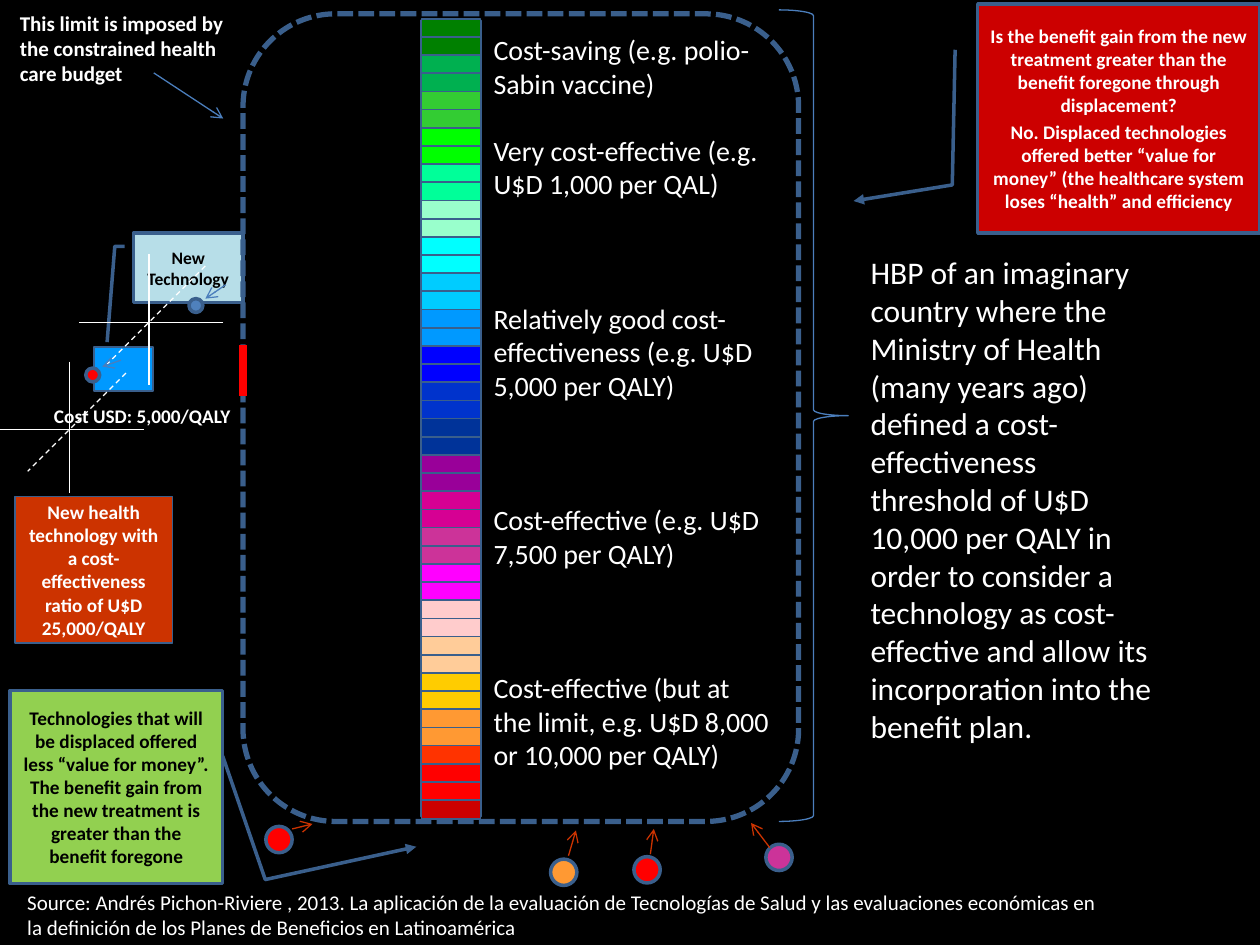
from lxml import etree
from pptx import Presentation
from pptx.dml.color import RGBColor
from pptx.enum.dml import MSO_LINE
from pptx.enum.shapes import MSO_CONNECTOR, MSO_SHAPE
from pptx.enum.text import MSO_ANCHOR, PP_ALIGN
from pptx.oxml.ns import qn
from pptx.util import Cm, Pt

STRAIGHT = MSO_CONNECTOR.STRAIGHT
RECTANGLE, ROUNDED = MSO_SHAPE.RECTANGLE, MSO_SHAPE.ROUNDED_RECTANGLE
CALLOUT, BRACE, OVAL = MSO_SHAPE.LINE_CALLOUT_2, MSO_SHAPE.RIGHT_BRACE, MSO_SHAPE.OVAL
LEFT, CENTER, RIGHT = PP_ALIGN.LEFT, PP_ALIGN.CENTER, PP_ALIGN.RIGHT
TOP, MIDDLE = MSO_ANCHOR.TOP, MSO_ANCHOR.MIDDLE
DASH, SHORT_DASH = MSO_LINE.DASH, MSO_LINE.SQUARE_DOT

THEME = {
    "font": "Calibri",
    "background": "000000", "light": "FFFFFF", "dark": "000000",
    "outline": "3A5F8C", "thin": "4B7EBC", "accent": "4F81BD",
    "sky": "0099FF", "pale": "B7DEE8", "green": "92D050", "rust": "CC3300",
    "crimson": "CC0000", "red": "FF0000", "orange": "FF9933", "magenta": "CC3399",
    "plan": 18, "label": 16, "note": 12, "box": 11, "small": 10,
}

PAIRED_BANDS = (
    "008000 00B050 33CC33 00FF00 00FF99 99FFCC 00FFFF 00CCFF 0099FF 0000FF "
    "0033CC 003399 990099 D60093 CC3399 FF00FF FFCCCC FFCC99 FFCC00 FF9933"
).split()
FINAL_BANDS = ["FF3300", "FF0000", "FF0000", "CC0000"]
STRIP = {"left": 8.5, "first": 0.38, "last": 16.13, "width": 1.19, "height": 0.38}

LABELS = [
    ("Cost-saving (e.g. polio-Sabin vaccine)", 0),
    ("Very cost-effective (e.g. U$D 1,000 per QAL)", 1),
    ("Relatively good cost-effectiveness (e.g. U$D 5,000 per QALY)", 3),
    ("Cost-effective (e.g. U$D 7,500 per QALY)", 3),
    ("Cost-effective (but at the limit, e.g. U$D 8,000 or 10,000 per QALY)", 3),
]
LABEL_LINE = 19.2

TEXTS = [
    ((17.3, 4.98, 6.2, 10.26), "plan", False, LEFT, TOP,
     "HBP of an imaginary country where the Ministry of Health (many years ago) defined a "
     "cost-effectiveness threshold of U$D 10,000 per QALY in order to consider a technology "
     "as cost-effective and allow its incorporation into the benefit plan."),
    ((0.15, 0.08, 5, 1.8), "note", True, LEFT, TOP,
     "This limit is imposed by the constrained health care budget"),
    ((0.71, 8.03, 4.19, 0.74), "box", True, RIGHT, TOP, "Cost USD: 5,000/QALY"),
    ((0.3, 17.83, 22.25, 1.22), "note", False, LEFT, MIDDLE,
     "Source: Andrés Pichon-Riviere , 2013. La aplicación de la evaluación de Tecnologías de "
     "Salud y las evaluaciones económicas en la definición de los Planes de Beneficios en "
     "Latinoamérica"),
]

BOXES = [
    (RECTANGLE, (1.9, 6.99, 1.19, 0.89), "sky", 1, [], False, "light", "box", []),
    (CALLOUT, (2.69, 4.7, 2.21, 1.4), "pale", 2,
     [0.19, -0.08, 0.19, -0.17, 1.57, -0.24], False, "dark", "small", ["New Technology"]),
    (CALLOUT, (0.2, 13.92, 4.29, 3.89), "green", 2,
     [0.34, 1, 0.98, 1.2, 0.81, 1.91], True, "dark", "box",
     ["Technologies that will be displaced offered less “value for money”. The benefit gain "
      "from the new treatment is greater than the benefit foregone"]),
    (RECTANGLE, (0.3, 10.01, 3.18, 2.95), "rust", 1, [], False, "light", "box",
     ["New health technology with a cost-effectiveness ratio of U$D 25,000/QALY"]),
    (CALLOUT, (19.71, 0.08, 5.69, 4.62), "crimson", 2,
     [0.2, -0.08, 0.79, -0.09, 0.86, -0.44], True, "light", "box",
     ["Is the benefit gain from the new treatment greater than the benefit foregone through "
      "displacement?",
      "No. Displaced technologies offered better “value for money” (the healthcare system "
      "loses “health” and efficiency"]),
]

CROSS_CENTRES = [(3, 6.5), (1.4, 8.66)]
CROSS_LINES = [
    ((0, -1.37), (0, 1.27), 1, None),
    ((1.5, 0), (-1.4, 0), 1, None),
    ((1.14, -1.14), (-0.84, 0.84), 0.75, DASH),
]
DOTS = [
    ((3.81, 6.02), 0.28, "accent"), ((1.73, 7.42), 0.28, "red"),
    ((15.44, 17.02), 0.53, "magenta"), ((12.78, 17.27), 0.53, "red"),
    ((5.36, 16.66), 0.53, "red"), ((11.1, 17.32), 0.53, "orange"),
]
ARROWS = [
    ((3.1, 1.47), (4.5, 2.39), "thin"), ((4.55, 5.74), (4.14, 6.02), "thin"),
    ((2.44, 7.26), (2.06, 7.39), "thin"), ((15.52, 17.09), (15.14, 16.59), "rust"),
    ((13.11, 17.22), (13.18, 16.71), "rust"), ((11.46, 17.25), (11.61, 16.74), "rust"),
    ((5.89, 16.71), (6.3, 16.61), "rust"),
]


def color(name):
    """Return a theme colour, or the colour of a hexadecimal value."""
    return RGBColor.from_string(THEME.get(name, name))


def style_line(line, name, width, dash=None, arrow=None):
    """Set colour, width, dash and end arrow of a line."""
    line.color.rgb = color(name)
    line.width = Pt(width)
    if dash:
        line.dash_style = dash
    if arrow:
        properties = line.color._xFill.getparent()
        etree.SubElement(properties, qn("a:tailEnd"), type=arrow)


def add_shape(slide, kind, place, fill, width, line="outline", dash=None, arrow=None):
    """Add a flat preset shape."""
    shape = slide.shapes.add_shape(kind, *map(Cm, place))
    shape.shadow.inherit = False
    if fill:
        shape.fill.solid()
        shape.fill.fore_color.rgb = color(fill)
    else:
        shape.fill.background()
    style_line(shape.line, line, width, dash, arrow)
    return shape


def add_line(slide, start, end, name, width, dash=None, arrow=None):
    """Add a straight line without shadow."""
    connector = slide.shapes.add_connector(STRAIGHT, *map(Cm, (*start, *end)))
    style_line(connector.line, name, width, dash, arrow)
    etree.SubElement(connector._element.spPr, qn("a:effectLst"))


def write(frame, entries, size, ink="light", bold=False, align=LEFT, anchor=TOP):
    """Fill a text frame with (text, space before) paragraphs."""
    frame.word_wrap = True
    frame.vertical_anchor = anchor
    for index, (text, space) in enumerate(entries):
        paragraph = frame.add_paragraph() if index else frame.paragraphs[0]
        paragraph.alignment = align
        paragraph.space_before = Pt(space)
        run = paragraph.add_run()
        run.text = text
        run.font.name = THEME["font"]
        run.font.size = Pt(THEME[size])
        run.font.bold = bold
        run.font.color.rgb = color(ink)


def add_strip(slide):
    """Draw the scale of coloured bands on its backing."""
    left, first, width = STRIP["left"], STRIP["first"], STRIP["width"]
    add_shape(slide, RECTANGLE, (left, 0.41, width, 16.05), "accent", 2)
    bands = [band for band in PAIRED_BANDS for _ in range(2)] + FINAL_BANDS
    pitch = (STRIP["last"] - first) / (len(bands) - 1)
    for row, band in enumerate(bands):
        add_shape(slide, RECTANGLE, (left, first + row * pitch, width, STRIP["height"]), band, 1)


def main():
    """Build the slide and save it."""
    presentation = Presentation()
    presentation.slide_width, presentation.slide_height = Cm(25.4), Cm(19.05)
    slide = presentation.slides.add_slide(presentation.slide_layouts[6])
    slide.background.fill.solid()
    slide.background.fill.fore_color.rgb = color("background")

    add_strip(slide)
    add_shape(slide, BRACE, (15.7, 0.2, 1.4, 16.36), None, 0.75, "thin")
    for kind, place, fill, width, adjustments, pointed, ink, size, texts in BOXES:
        arrow = "triangle" if pointed else None
        shape = add_shape(slide, kind, place, fill, width, arrow=arrow)
        for index, value in enumerate(adjustments):
            shape.adjustments[index] = value
        entries = [(text, 2 if index else 0) for index, text in enumerate(texts)]
        write(shape.text_frame, entries, size, ink, True, CENTER, MIDDLE)
    add_shape(slide, ROUNDED, (4.9, 0.28, 11.2, 16.28), None, 3, dash=SHORT_DASH)
    add_line(slide, (4.9, 6.96), (4.9, 7.98), "red", 4.5)

    for place, size, bold, align, anchor, text in TEXTS:
        frame = slide.shapes.add_textbox(*map(Cm, place)).text_frame
        write(frame, [(text, 0)], size, "light", bold, align, anchor)
    label_frame = slide.shapes.add_textbox(Cm(9.7), Cm(0.53), Cm(6.15), Cm(15.29)).text_frame
    write(label_frame, [(text, gap * LABEL_LINE) for text, gap in LABELS], "label")

    for x, y in CROSS_CENTRES:
        for (x1, y1), (x2, y2), width, dash in CROSS_LINES:
            add_line(slide, (x + x1, y + y1), (x + x2, y + y2), "light", width, dash)
    for corner, diameter, fill in DOTS:
        add_shape(slide, OVAL, (*corner, diameter, diameter), fill, 2)
    for start, end, name in ARROWS:
        add_line(slide, start, end, name, 0.75, arrow="arrow")
    presentation.save("out.pptx")


if __name__ == "__main__":
    main()
